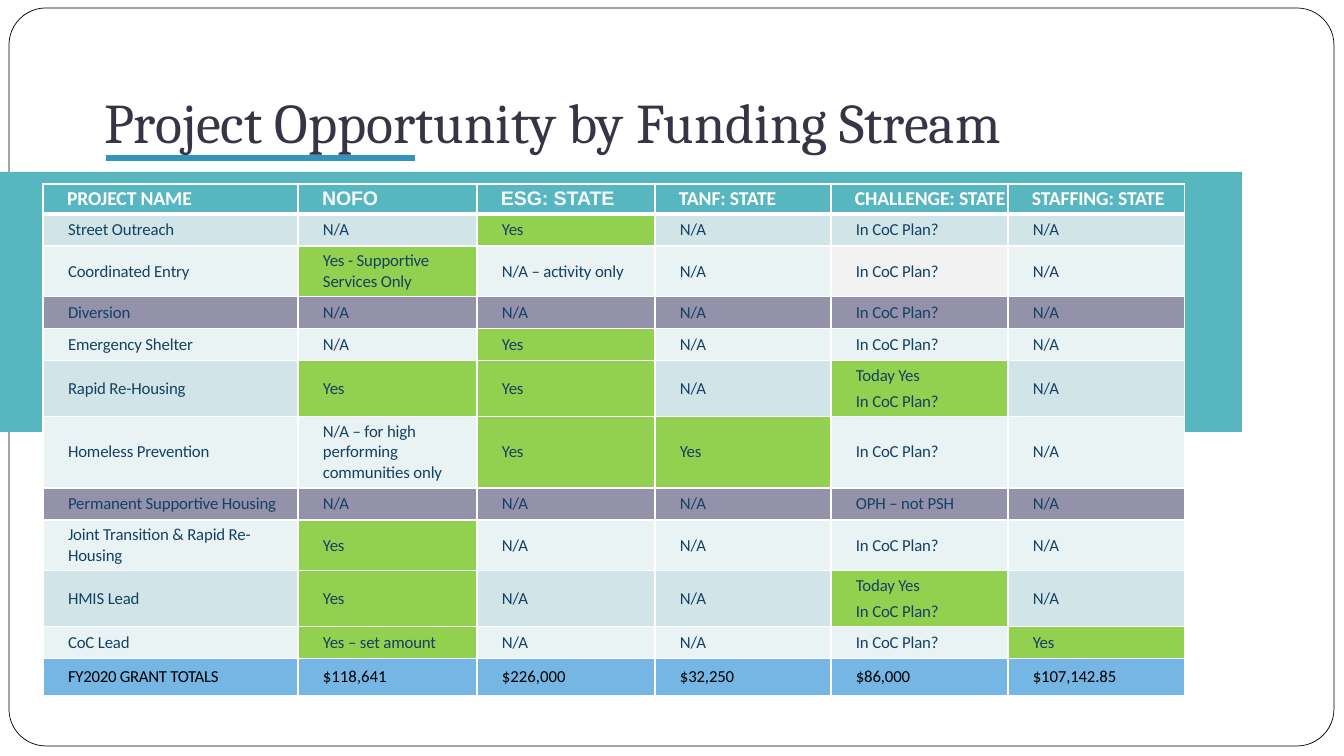
from lxml import etree
from pptx import Presentation
from pptx.dml.color import RGBColor
from pptx.enum.shapes import MSO_CONNECTOR, MSO_SHAPE
from pptx.enum.text import MSO_ANCHOR, MSO_AUTO_SIZE, PP_ALIGN
from pptx.oxml.ns import qn
from pptx.util import Pt

STRAIGHT = MSO_CONNECTOR.STRAIGHT
RECTANGLE, ROUNDED = MSO_SHAPE.RECTANGLE, MSO_SHAPE.ROUNDED_RECTANGLE
BOTTOM, MIDDLE = MSO_ANCHOR.BOTTOM, MSO_ANCHOR.MIDDLE
NO_AUTOFIT = MSO_AUTO_SIZE.NONE
LEFT = PP_ALIGN.LEFT

WHITE = RGBColor(0xFF, 0xFF, 0xFF)
BLACK = RGBColor(0x00, 0x00, 0x00)
TEAL = RGBColor(0x58, 0xB6, 0xC0)
BLUE = RGBColor(0x34, 0x94, 0xBA)
SLATE = RGBColor(0x37, 0x35, 0x45)
NAVY = RGBColor(0x13, 0x41, 0x63)
OFF_WHITE = RGBColor(0xF5, 0xF8, 0xFA)
MIST = RGBColor(0xD1, 0xE5, 0xE8)
PALE = RGBColor(0xEA, 0xF3, 0xF4)
PURPLE = RGBColor(0x94, 0x91, 0xAB)
GREEN = RGBColor(0x92, 0xD0, 0x50)
GREY = RGBColor(0xF2, 0xF2, 0xF2)
SKY = RGBColor(0x75, 0xB6, 0xE5)

TITLE = "Project Opportunity by Funding Stream"
STREAMS = ("PROJECT NAME", "NOFO", "ESG: STATE", "TANF: STATE", "CHALLENGE: STATE", "STAFFING: STATE")
ARIAL_STREAMS = ("NOFO", "ESG: STATE")
PROJECTS = [
    ("Street Outreach", "N/A", "Yes", "N/A", "In CoC Plan?", "N/A"),
    ("Coordinated Entry", "Yes - Supportive Services Only", "N/A – activity only", "N/A", "In CoC Plan?", "N/A"),
    ("Diversion", "N/A", "N/A", "N/A", "In CoC Plan?", "N/A"),
    ("Emergency Shelter", "N/A", "Yes", "N/A", "In CoC Plan?", "N/A"),
    ("Rapid Re-Housing", "Yes", "Yes", "N/A", "Today Yes\nIn CoC Plan?", "N/A"),
    ("Homeless Prevention", "N/A – for high performing communities only", "Yes", "Yes", "In CoC Plan?", "N/A"),
    ("Permanent Supportive Housing", "N/A", "N/A", "N/A", "OPH – not PSH", "N/A"),
    ("Joint Transition & Rapid Re-Housing", "Yes", "N/A", "N/A", "In CoC Plan?", "N/A"),
    ("HMIS Lead", "Yes", "N/A", "N/A", "Today Yes\nIn CoC Plan?", "N/A"),
    ("CoC Lead", "Yes – set amount", "N/A", "N/A", "In CoC Plan?", "Yes"),
]
TOTALS = ("FY2020 GRANT TOTALS", "$118,641", "$226,000", "$32,250", "$86,000", "$107,142.85")
TOTALS_SPACING = (-20, 0, 0, -10, -10, -10)
BAND_CYCLE = (MIST, PALE, PURPLE, PALE)
GREY_CELL = ("Coordinated Entry", "CHALLENGE: STATE")

COLUMN_WIDTHS = (255, 179, 178, 176, 177, 177)
HEADER_HEIGHT, PROJECT_HEIGHT, TOTALS_HEIGHT = 30, 32, 37
TABLE_LEFT, TABLE_TOP, TABLE_HEIGHT = 43, 184, 509
SCALE = 914400 / 100.8


def px(length):
    return round(length * SCALE)


def add_panel(slide, preset, left, top, width, height, color):
    panel = slide.shapes.add_shape(preset, px(left), px(top), px(width), px(height))
    panel.shadow.inherit = False
    panel.fill.solid()
    panel.fill.fore_color.rgb = color
    panel.line.fill.background()
    return panel


def set_borders(cell, bottom_width):
    properties = cell._tc.get_or_add_tcPr()
    widths = {"a:lnL": 1, "a:lnR": 1, "a:lnT": 1, "a:lnB": bottom_width}
    for position, (side, width) in enumerate(widths.items()):
        border = etree.Element(qn(side), w=str(Pt(width)))
        fill = etree.SubElement(border, qn("a:solidFill"))
        etree.SubElement(fill, qn("a:srgbClr"), val=str(WHITE))
        properties.insert(position, border)


def fill_cell(cell, words, fill, color, *, size=12, font="Calibri", bold=False, indent=25,
              before=3.4, spacing=-10, padding=(0, 5, 10, 5), bottom_width=1):
    cell.text = words
    cell.vertical_anchor = MIDDLE
    cell.margin_left, cell.margin_top, cell.margin_right, cell.margin_bottom = map(px, padding)
    cell.fill.solid()
    cell.fill.fore_color.rgb = fill
    set_borders(cell, bottom_width)
    for paragraph in cell.text_frame.paragraphs:
        paragraph.space_before = Pt(before)
        layout = paragraph._p.get_or_add_pPr()
        layout.set("marL", str(px(indent)))
        layout.set("indent", "0")
        for run in paragraph.runs:
            run.font.name = font
            run.font.size = Pt(size)
            run.font.bold = bold
            run.font.color.rgb = color
            run._r.get_or_add_rPr().set("spc", str(spacing))


def project_fill(row, project, stream, answer):
    if "Yes" in answer:
        return GREEN
    if (project, stream) == GREY_CELL:
        return GREY
    return BAND_CYCLE[row % len(BAND_CYCLE)]


def add_funding_table(slide):
    frame = slide.shapes.add_table(len(PROJECTS) + 2, len(STREAMS), px(TABLE_LEFT), px(TABLE_TOP),
                                   px(sum(COLUMN_WIDTHS)), px(TABLE_HEIGHT))
    table = frame.table
    table.horz_banding = False
    for column, width in zip(table.columns, COLUMN_WIDTHS):
        column.width = px(width)
    heights = [HEADER_HEIGHT] + [PROJECT_HEIGHT] * len(PROJECTS) + [TOTALS_HEIGHT]
    for row, height in zip(table.rows, heights):
        row.height = px(height)
    frame.height = px(TABLE_HEIGHT)

    for column, stream in enumerate(STREAMS):
        arial = stream in ARIAL_STREAMS
        fill_cell(table.cell(0, column), stream, TEAL, OFF_WHITE if arial else WHITE, size=14,
                  font="Arial" if arial else "Calibri", bold=True, indent=24, before=7.8,
                  padding=(0, 0, 0, 0), bottom_width=3)
        for row, answers in enumerate(PROJECTS):
            answer = answers[column]
            fill_cell(table.cell(row + 1, column), answer,
                      project_fill(row, answers[0], stream, answer), NAVY)
        fill_cell(table.cell(len(PROJECTS) + 1, column), TOTALS[column], SKY, BLACK, before=3.7,
                  spacing=TOTALS_SPACING[column], padding=(0, 0, 0, 0))


def place_title(slide):
    title = slide.shapes.title
    slide.shapes._spTree.append(title._element)
    title.left, title.top, title.width, title.height = map(px, (94, 19, 1159, 146))
    frame = title.text_frame
    frame.text = TITLE
    frame.word_wrap = True
    frame.auto_size = NO_AUTOFIT
    frame.vertical_anchor = BOTTOM
    frame.margin_left, frame.margin_top, frame.margin_right, frame.margin_bottom = map(px, (10, 5, 10, 10))
    heading = frame.paragraphs[0]
    heading.alignment = LEFT
    heading.font.name = "Cambria"
    heading.font.size = Pt(40)
    heading.font.color.rgb = SLATE


def add_underline(slide):
    underline = slide.shapes.add_connector(STRAIGHT, px(106), px(158), px(415), px(158))
    underline.line.color.rgb = BLUE
    underline.line.width = Pt(4.32)
    etree.SubElement(underline._element.spPr, qn("a:effectLst"))


def main():
    deck = Presentation()
    deck.slide_width, deck.slide_height = px(1344), px(756)
    slide = deck.slides.add_slide(deck.slide_layouts[5])
    page = add_panel(slide, ROUNDED, 9, 8, 1325, 738, WHITE)
    page.adjustments[0] = 0.05
    page.line.color.rgb = BLACK
    page.line.width = Pt(0.5)
    add_panel(slide, RECTANGLE, 0, 172, 1242, 260, TEAL)
    place_title(slide)
    add_underline(slide)
    add_funding_table(slide)
    deck.save("out.pptx")


if __name__ == "__main__":
    main()
